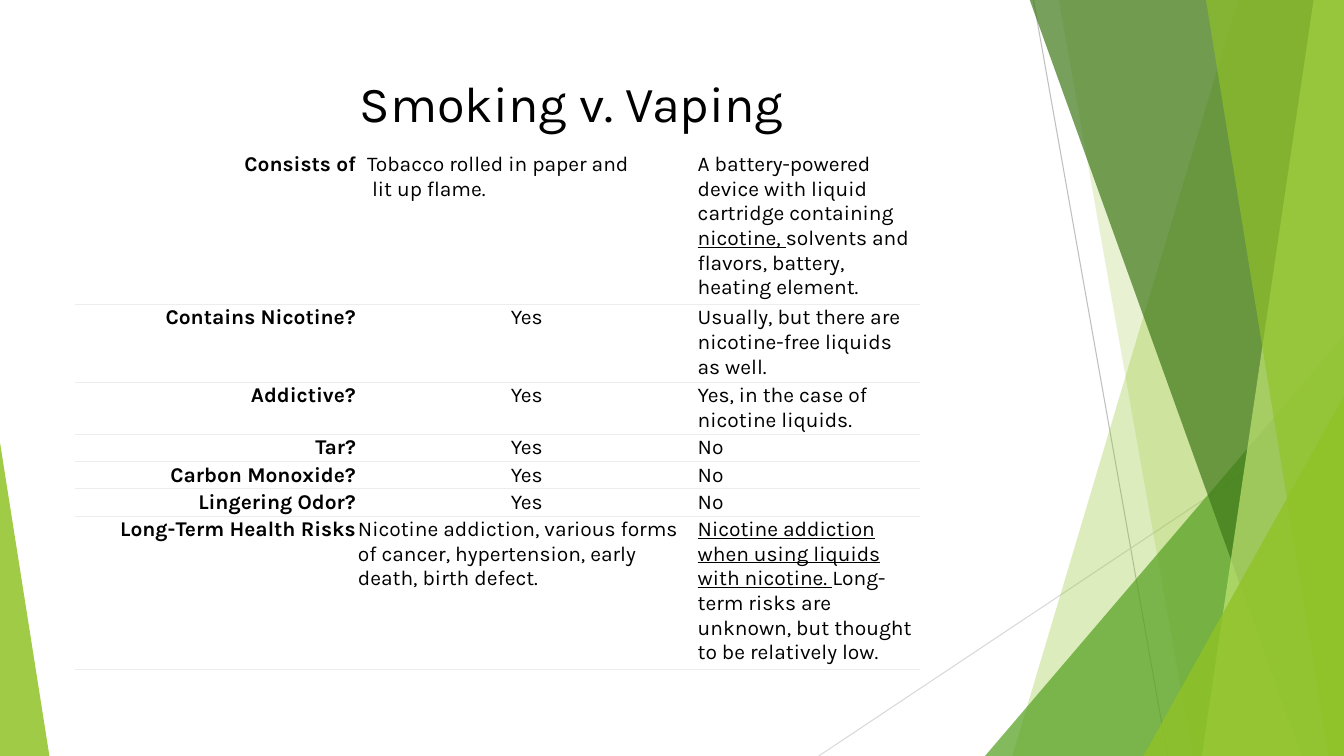
from lxml import etree
from pptx import Presentation
from pptx import util as u
from pptx.dml.color import RGBColor
from pptx.enum import shapes, text
from pptx.oxml import ns

BLACK = RGBColor(0x00, 0x00, 0x00)
LIME = RGBColor(0x90, 0xC2, 0x26)
GREEN = RGBColor(0x54, 0xA0, 0x21)
DARK = RGBColor(0x3F, 0x78, 0x19)
PALE = RGBColor(0xC0, 0xE4, 0x74)
GREY = RGBColor(0xBF, 0xBF, 0xBF)
SILVER = RGBColor(0xD9, 0xD9, 0xD9)
RULE = RGBColor(0xED, 0xED, 0xED)

FONT = "Karla"
WIDE, HIGH = 13.33, 7.5
PLAIN = "{2D5ABB26-0587-4C30-8999-92F81FD0307C}"
LEFT, MID, RIGHT = text.PP_ALIGN.LEFT, text.PP_ALIGN.CENTER, text.PP_ALIGN.RIGHT

COLS = [2.8, 3.37, 2.22]
ROWS = [
    (1.48, "Consists of",
     [("Tobacco rolled in paper and", 0.09), ("lit up flame.", 0.14)],
     [("A battery-powered device with liquid cartridge containing ", False),
      ("nicotine, ", True),
      ("solvents and flavors, battery, heating element.", False)]),
    (0.75, "Contains Nicotine?", "Yes",
     [("Usually, but there are nicotine-free liquids as well.", False)]),
    (0.51, "Addictive?", "Yes",
     [("Yes, in the case of nicotine liquids.", False)]),
    (0.26, "Tar?", "Yes", [("No", False)]),
    (0.26, "Carbon Monoxide?", "Yes", [("No", False)]),
    (0.26, "Lingering Odor?", "Yes", [("No", False)]),
    (1.49, "Long-Term Health Risks",
     [("Nicotine addiction, various forms of cancer, hypertension, "
       "early death, birth defect.", 0)],
     [("Nicotine addiction when using liquids with nicotine. ", True),
      ("Long-term risks are unknown, but thought to be relatively low.", False)]),
]


def add_run(para, words, size=15, bold=False, under=False):
    run = para.add_run()
    run.text = words
    font = run.font
    font.name, font.size, font.bold = FONT, u.Pt(size), bold
    font.underline = under
    font.color.rgb = BLACK


def indent(para, gap):
    prop = para._p.get_or_add_pPr()
    prop.set("marL", str(u.Inches(gap)))
    prop.set("indent", "0")


def paint(shape, color, alpha):
    shape.shadow.inherit = False
    shape.line.fill.background()
    shape.fill.solid()
    shape.fill.fore_color.rgb = color
    tint = next(shape.element.spPr.iter(ns.qn("a:srgbClr")))
    etree.SubElement(tint, ns.qn("a:alpha")).set("val", str(alpha * 1000))


def add_line(slide, start, end, color):
    points = [u.Inches(v) for v in start + end]
    line = slide.shapes.add_connector(shapes.MSO_CONNECTOR.STRAIGHT, *points)
    line.line.color.rgb = color
    line.line.width = u.Pt(0.75)
    etree.SubElement(line.element.spPr, ns.qn("a:effectLst"))


def add_band(slide, top, foot, color, alpha):
    spots = [(top, -0.01), (WIDE, -0.01), (WIDE, HIGH), (foot, HIGH)]
    spots = [(u.Inches(x), u.Inches(y)) for x, y in spots]
    form = slide.shapes.build_freeform(*spots[0], scale=1.0)
    form.add_line_segments(spots[1:], close=True)
    paint(form.convert_to_shape(), color, alpha)


def add_wedge(slide, left, top, width, tip, color, alpha):
    box = [u.Inches(v) for v in (left, top, width, HIGH - top)]
    wedge = slide.shapes.add_shape(shapes.MSO_SHAPE.ISOSCELES_TRIANGLE, *box)
    wedge.adjustments[0] = tip
    paint(wedge, color, alpha)


def add_title(slide, words):
    box = [u.Inches(v) for v in (0.74, 0.67, 9.4, 1.44)]
    frame = slide.shapes.add_textbox(*box).text_frame
    frame.word_wrap = True
    para = frame.paragraphs[0]
    indent(para, 2.73)
    add_run(para, words, 36)


def set_cell(cell, inset):
    cell.margin_left = u.Inches(inset)
    cell.margin_right = cell.margin_top = cell.margin_bottom = u.Inches(0.01)
    cell.fill.background()
    prop = cell._tc.get_or_add_tcPr()
    edge = etree.Element(ns.qn("a:lnB"), w=str(u.Pt(0.75)))
    fill = etree.SubElement(edge, ns.qn("a:solidFill"))
    etree.SubElement(fill, ns.qn("a:srgbClr"), val=str(RULE))
    prop.insert(0, edge)


def fill_row(cells, label, smoke, vape):
    head, mid, last = [cell.text_frame for cell in cells]
    para = head.paragraphs[0]
    para.alignment = RIGHT
    add_run(para, label, bold=True)

    if isinstance(smoke, str):
        para = mid.paragraphs[0]
        para.alignment = MID
        add_run(para, smoke)
    else:
        for i, (words, gap) in enumerate(smoke):
            para = mid.add_paragraph() if i else mid.paragraphs[0]
            para.alignment = LEFT
            indent(para, gap)
            add_run(para, words)

    para = last.paragraphs[0]
    para.alignment = LEFT
    for words, under in vape:
        add_run(para, words, under=under)


def add_grid(slide):
    high = sum(row[0] for row in ROWS)
    box = [u.Inches(v) for v in (0.74, 1.5, sum(COLS), high)]
    frame = slide.shapes.add_table(len(ROWS), len(COLS), *box)
    next(frame.element.iter(ns.qn("a:tableStyleId"))).text = PLAIN
    grid = frame.table
    grid.first_row = grid.horz_banding = False
    for col, width in zip(grid.columns, COLS):
        col.width = u.Inches(width)
    for row, (tall, *words) in zip(grid.rows, ROWS):
        row.height = u.Inches(tall)
        for i, cell in enumerate(row.cells):
            set_cell(cell, 0.01 if i else 0.02)
        fill_row(row.cells, *words)


def main():
    deck = Presentation()
    deck.slide_width, deck.slide_height = u.Inches(WIDE), u.Inches(HIGH)
    slide = deck.slides.add_slide(deck.slide_layouts[6])

    add_line(slide, (10.25, 0), (11.58, HIGH), GREY)
    add_line(slide, (WIDE, 4.03), (8.12, HIGH), SILVER)
    add_band(slide, 12.28, 10.04, LIME, 30)
    add_band(slide, 10.5, 11.83, LIME, 20)
    add_wedge(slide, 9.77, 3.33, 3.56, 1, GREEN, 72)
    add_band(slide, 10.21, 12.91, DARK, 70)
    add_band(slide, 13.03, 11.92, PALE, 70)
    add_band(slide, 11.96, 13.18, LIME, 65)
    add_wedge(slide, 11.34, 3.93, 1.99, 1, LIME, 80)
    add_wedge(slide, 0, 4.39, 0.49, 0, LIME, 85)

    add_title(slide, "Smoking v. Vaping")
    add_grid(slide)
    deck.save("out.pptx")


if __name__ == "__main__":
    main()
